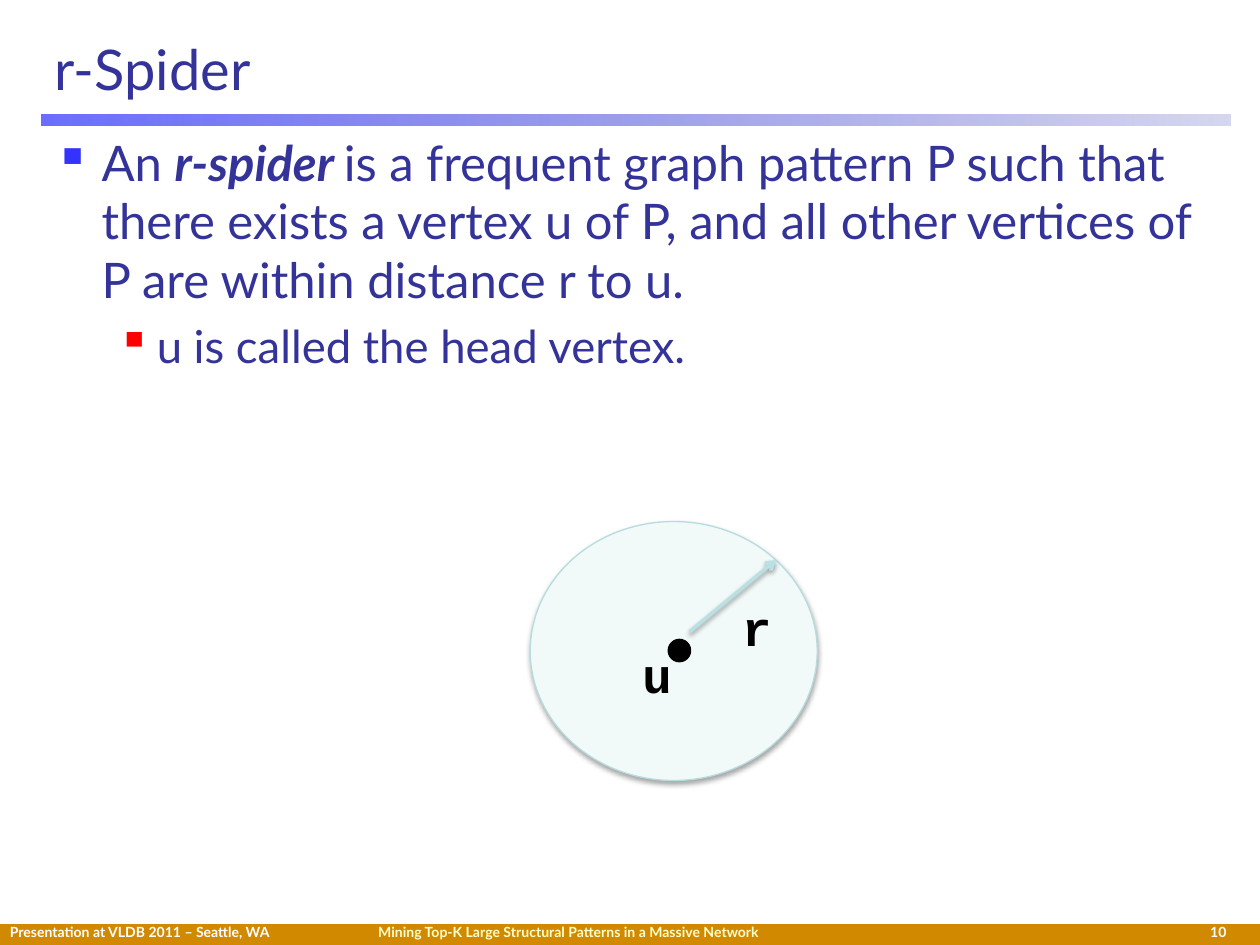
from dataclasses import dataclass

import lxml.etree
import pptx
import pptx.dml.color
import pptx.enum.shapes
import pptx.enum.text
import pptx.oxml.ns
import pptx.util

Pt = pptx.util.Pt
Align = pptx.enum.text.PP_ALIGN
Anchor = pptx.enum.text.MSO_ANCHOR
Shape = pptx.enum.shapes.MSO_SHAPE
qn = pptx.oxml.ns.qn


@dataclass(frozen=True)
class Theme:
    font: str = "Lato"
    label_font: str = "Courier New"
    text: str = "333399"
    bullet: str = "3333FF"
    sub_bullet: str = "FF0000"
    footer_fill: str = "D18A00"
    footer_text: str = "FFFFFF"
    footer_title: str = "FFFFCC"
    rule_start: str = "464AFC"
    rule_end: str = "3235B4"
    disc: str = "F1F9F9"
    disc_line: str = "B6DCDF"
    arrow: str = "BBE0E3"
    ink: str = "000000"
    title_size: int = 32
    body_size: int = 28
    sub_size: int = 26
    label_size: int = 28
    footer_size: int = 8


THEME = Theme()


def rgb(color):
    return pptx.dml.color.RGBColor.from_string(color)


def add_element(parent, tag, **attributes):
    return lxml.etree.SubElement(parent, qn(tag), attributes)


def style(paragraph, size, color, font=THEME.font, bold=False):
    paragraph.font.name = font
    paragraph.font.size = Pt(size)
    paragraph.font.color.rgb = rgb(color)
    paragraph.font.bold = bold


def add_shape(page, kind, box, fill=None, line=None, width=1):
    shape = page.shapes.add_shape(kind, *map(Pt, box))
    shape.shadow.inherit = False
    if fill:
        shape.fill.solid()
        shape.fill.fore_color.rgb = rgb(fill)
    if line:
        shape.line.color.rgb = rgb(line)
        shape.line.width = Pt(width)
    else:
        shape.line.fill.background()
    return shape


def add_text(page, box, text, size, color, align=Align.LEFT, wrap=True, **options):
    frame = page.shapes.add_textbox(*map(Pt, box)).text_frame
    frame.word_wrap = wrap
    paragraph = frame.paragraphs[0]
    paragraph.text = text
    paragraph.alignment = align
    style(paragraph, size, color, **options)


def add_shadow(shape, opacity):
    """Give the shape a soft shadow straight below it."""
    properties = shape._element.spPr
    effects = properties.find(qn("a:effectLst"))
    if effects is None:
        effects = add_element(properties, "a:effectLst")
    shadow = add_element(effects, "a:outerShdw", blurRad=str(Pt(3.1)), dist=str(Pt(1.7)),
                         dir="5400000", rotWithShape="0")
    color = add_element(shadow, "a:srgbClr", val=THEME.ink)
    add_element(color, "a:alpha", val=str(opacity * 1000))


def add_heading(page, box):
    left, top, width, height = box
    title = page.shapes.title
    title.left, title.top, title.width, title.height = map(Pt, box)
    frame = title.text_frame
    frame.text = "r-Spider"
    frame.auto_size = pptx.enum.text.MSO_AUTO_SIZE.NONE
    frame.vertical_anchor = Anchor.MIDDLE
    frame.paragraphs[0].alignment = Align.LEFT
    style(frame.paragraphs[0], THEME.title_size, THEME.text)

    rule = add_shape(page, Shape.RECTANGLE, (left, top + height - 0.5, width + 1, 6.5))
    rule.fill.gradient()
    rule.fill.gradient_angle = 0
    for stop, color in zip(rule.fill.gradient_stops, (THEME.rule_start, THEME.rule_end)):
        stop.color.rgb = rgb(color)
    for color, opacity in zip(rule._element.spPr.iter(qn("a:srgbClr")), (80, 20)):
        add_element(color, "a:alpha", val=str(opacity * 1000))


def add_bullet(paragraph, color, margin, hanging):
    properties = paragraph._p.get_or_add_pPr()
    properties.set("marL", str(Pt(margin)))
    properties.set("indent", str(-Pt(hanging)))
    add_element(add_element(properties, "a:buClr"), "a:srgbClr", val=color)
    add_element(properties, "a:buChar", char="▪")


def add_definition(page, box):
    frame = page.shapes.add_textbox(*map(Pt, box)).text_frame
    frame.word_wrap = True
    definition = frame.paragraphs[0]
    add_bullet(definition, THEME.bullet, 27, 27)
    style(definition, THEME.body_size, THEME.text)
    definition.add_run().text = "An "
    term = definition.add_run()
    term.text = "r-spider "
    term.font.bold = term.font.italic = True
    definition.add_run().text = (
        "is a frequent graph pattern P such that there exists a vertex u of P, "
        "and all other vertices of P are within distance r to u.")

    remark = frame.add_paragraph()
    remark.level = 1
    remark.text = "u is called the head vertex."
    add_bullet(remark, THEME.sub_bullet, 58.5, 22.5)
    remark.space_before = Pt(0.2 * THEME.sub_size)
    style(remark, THEME.sub_size, THEME.text)


def add_spider(page, box):
    """Draw the disc of radius r around the head vertex u."""
    left, top, width, height = box

    def add_label(text, x, y, label_width):
        add_text(page, (left + x, top + y, label_width, 41), text, THEME.label_size,
                 THEME.ink, Align.CENTER, wrap=False, font=THEME.label_font, bold=True)

    disc = add_shape(page, Shape.OVAL, box, THEME.disc, THEME.disc_line, 0.75)
    add_shadow(disc, 35)
    add_label("u", 57, 67, 28)
    add_shape(page, Shape.OVAL, (left + 79.5, top + 68, 11.5, 11.5), THEME.ink, THEME.ink, 2)

    radius = page.shapes.add_connector(
        pptx.enum.shapes.MSO_CONNECTOR.STRAIGHT,
        Pt(left + 91), Pt(top + 63), Pt(left + 140.5), Pt(top + 22))
    radius.line.color.rgb = rgb(THEME.arrow)
    radius.line.width = Pt(2)
    add_element(radius.line._get_or_add_ln(), "a:tailEnd", type="arrow")
    add_shadow(radius, 38)
    add_label("r", 114, 40, 22)


def add_footer(page, box):
    left, top, width, height = box
    add_shape(page, Shape.RECTANGLE, box, THEME.footer_fill)
    parts = (
        ("Presentation at VLDB 2011 – Seattle, WA", -1.5, 265, THEME.footer_text, Align.LEFT),
        ("Mining Top-K Large Structural Patterns in a Massive Network", 209, 342,
         THEME.footer_title, Align.LEFT),
        ("10", 606, 102, THEME.footer_text, Align.RIGHT),
    )
    for text, x, part_width, color, align in parts:
        add_text(page, (left + x, top - 4, part_width, 16.5), text, THEME.footer_size,
                 color, align, bold=True)


def main():
    deck = pptx.Presentation()
    deck.slide_width, deck.slide_height = Pt(720), Pt(540)
    page = deck.slides.add_slide(deck.slide_layouts[5])
    add_footer(page, (0, 528, 720, 12))
    add_heading(page, (24, 12, 678, 54))
    add_definition(page, (24, 72, 678, 438))
    add_spider(page, (303, 298, 164, 148))
    deck.save("out.pptx")


if __name__ == "__main__":
    main()
